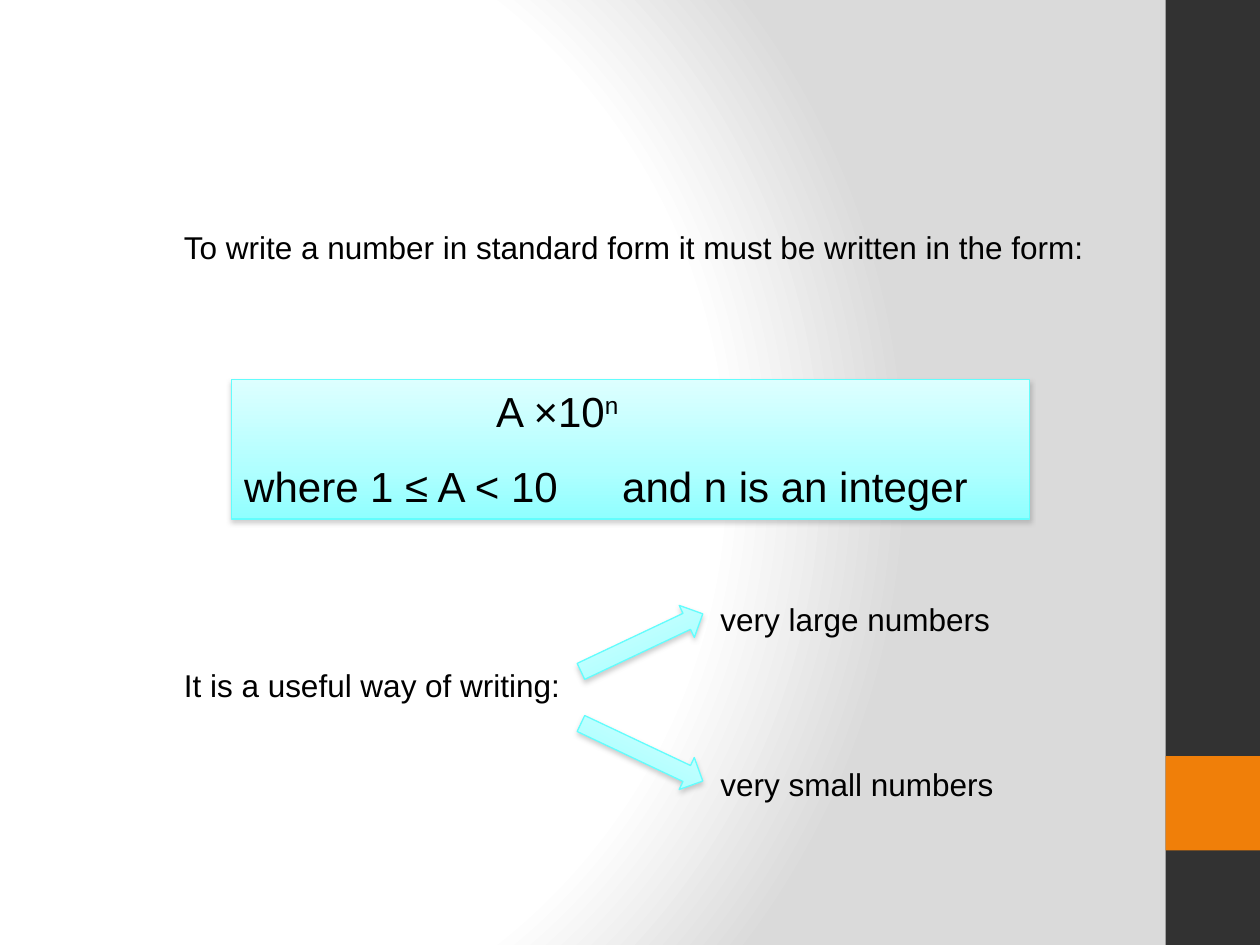
from dataclasses import dataclass

from lxml import etree
from pptx import Presentation
from pptx.dml.color import RGBColor
from pptx.enum import shapes, text
from pptx.oxml import ns
from pptx.util import Pt


@dataclass(frozen=True)
class Theme:
    font: str = "Arial"
    ink: str = "000000"
    sidebar: str = "323232"
    accent: str = "F07F09"
    edge: str = "63FDFD"
    shade: str = "808080"
    glow: tuple = ((0, "DDFFFF"), (65, "B0FFFF"), (100, "8FFFFF"))
    backdrop: tuple = ((0, "FFFFFF"), (75, "FFFFFF"), (100, "DADADA"))
    body: int = 18
    formula: int = 24


def add_node(parent, tag, **attributes):
    values = {name: str(value) for name, value in attributes.items()}
    return etree.SubElement(parent, ns.qn(tag), values)


class Board:
    def __init__(self, slide, theme):
        self.slide = slide
        self.theme = theme

    def gradient(self, fill, owner, stops):
        fill.gradient()
        gradient = owner.find(ns.qn("a:gradFill"))
        for child in list(gradient):
            gradient.remove(child)
        stop_list = add_node(gradient, "a:gsLst")
        for percent, colour in stops:
            stop = add_node(stop_list, "a:gs", pos=percent * 1000)
            add_node(stop, "a:srgbClr", val=colour)
        return gradient

    def background(self):
        fill = self.slide.background.fill
        owner = self.slide._element.cSld.bg.bgPr
        gradient = self.gradient(fill, owner, self.theme.backdrop)
        circle = add_node(gradient, "a:path", path="circle")
        add_node(circle, "a:fillToRect", l=20000, t=50000, r=100000, b=50000)

    def shape(self, kind, left, top, width, height):
        shape = self.slide.shapes.add_shape(
            kind, Pt(left), Pt(top), Pt(width), Pt(height))
        shape.shadow.inherit = False
        return shape

    def band(self, left, top, width, height, colour):
        band = self.shape(shapes.MSO_SHAPE.RECTANGLE, left, top, width, height)
        band.fill.solid()
        band.fill.fore_color.rgb = RGBColor.from_string(colour)
        band.line.fill.background()

    def glowing(self, kind, left, top, width, height, rotation=0):
        shape = self.shape(kind, left, top, width, height)
        shape.rotation = rotation
        properties = shape._element.spPr
        gradient = self.gradient(shape.fill, properties, self.theme.glow)
        add_node(gradient, "a:lin", ang=5400000, scaled=0)
        shape.line.color.rgb = RGBColor.from_string(self.theme.edge)
        shape.line.width = Pt(0.75)
        effects = properties.find(ns.qn("a:effectLst"))
        shadow = add_node(effects, "a:outerShdw", blurRad=Pt(3.1), dist=Pt(1.6),
                          dir=5400000, rotWithShape=0)
        colour = add_node(shadow, "a:srgbClr", val=self.theme.shade)
        add_node(colour, "a:alpha", val=38000)
        return shape

    def style(self, paragraph, size):
        paragraph.alignment = text.PP_ALIGN.LEFT
        for run in paragraph.runs:
            run.font.name = self.theme.font
            run.font.size = Pt(size)
            run.font.color.rgb = RGBColor.from_string(self.theme.ink)

    def label(self, left, top, width, words):
        label = self.slide.shapes.add_textbox(Pt(left), Pt(top), Pt(width), Pt(29))
        frame = label.text_frame
        frame.word_wrap = True
        frame.text = words
        self.style(frame.paragraphs[0], self.theme.body)

    def formula(self, left, top, width, height, base, exponent, condition):
        box = self.glowing(shapes.MSO_SHAPE.RECTANGLE, left, top, width, height)
        frame = box.text_frame
        frame.vertical_anchor = text.MSO_ANCHOR.TOP
        frame.text = base
        power = frame.paragraphs[0]
        power.add_run().text = exponent
        rule = frame.add_paragraph()
        rule.text = condition
        rule.space_before = Pt(14)
        for paragraph in frame.paragraphs:
            self.style(paragraph, self.theme.formula)
        power.runs[-1].font._element.set("baseline", "30000")


def main():
    deck = Presentation()
    deck.slide_width, deck.slide_height = Pt(720), Pt(540)
    theme = Theme()
    board = Board(deck.slides.add_slide(deck.slide_layouts[6]), theme)

    board.background()
    board.band(666, 0, 54, 540, theme.sidebar)
    board.band(666, 432, 54, 54, theme.accent)

    board.label(98, 126.7, 530,
                "To write a number in standard form it must be written in the form:")
    board.formula(132.5, 216.7, 455.8, 79.9, "\t\t\t\tA ×10", "n",
                  "where\t1 ≤ A < 10\t\tand n is an integer")

    board.label(98, 377.3, 230, "It is a useful way of writing:")
    uses = (
        ("very large numbers", 339.1, 357.1, -25.3),
        ("very small numbers", 433.4, 419.8, 25.3),
    )
    for words, label_top, arrow_top, rotation in uses:
        board.label(404.6, label_top, 237, words)
        board.glowing(shapes.MSO_SHAPE.RIGHT_ARROW, 328.3, arrow_top, 77, 20.2, rotation)

    deck.save("out.pptx")


if __name__ == "__main__":
    main()
